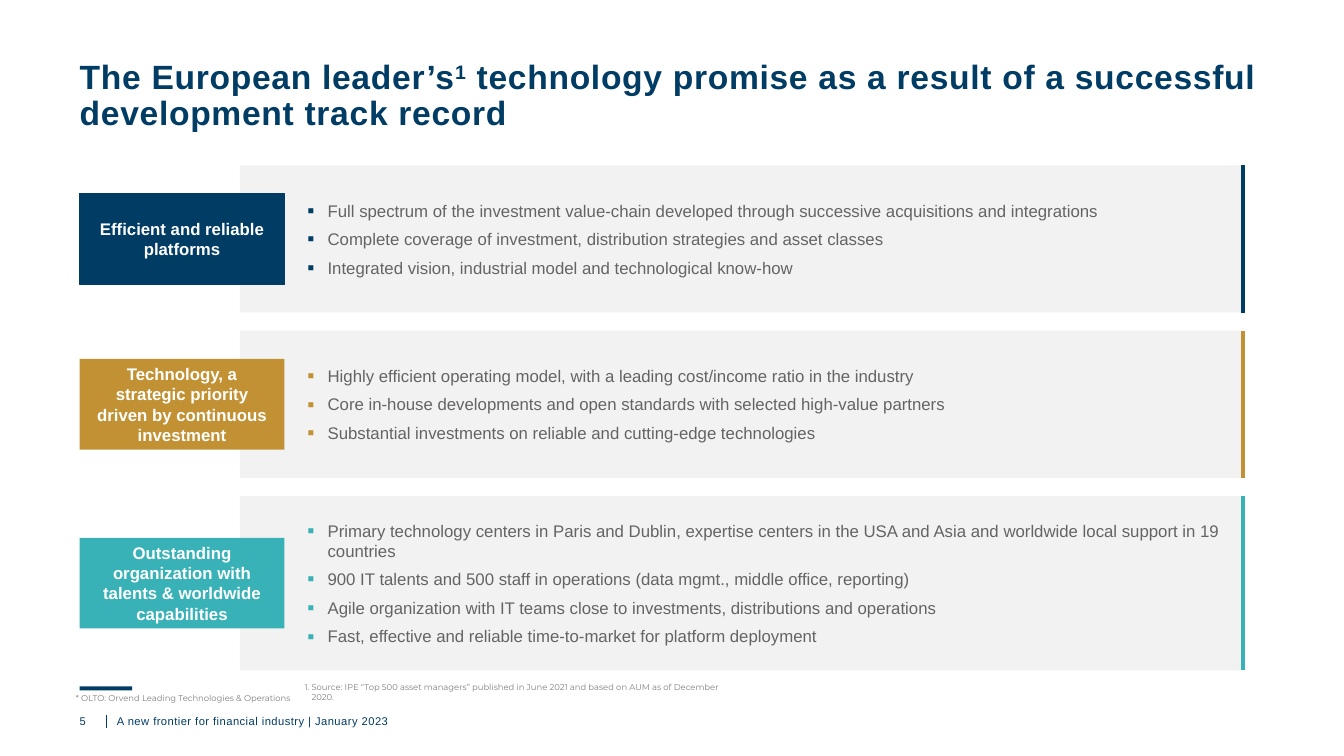
from pptx import Presentation
from pptx.dml.color import RGBColor
from pptx.enum.shapes import MSO_CONNECTOR, MSO_SHAPE
from pptx.enum.text import MSO_ANCHOR as ANCHOR, PP_ALIGN as ALIGN
from pptx.oxml.ns import qn
from pptx.util import Inches, Pt
from lxml.etree import SubElement

NAVY = RGBColor(0x00, 0x3C, 0x64)
GOLD = RGBColor(0xC1, 0x91, 0x34)
TEAL = RGBColor(0x38, 0xB2, 0xB6)
PANEL = RGBColor(0xF2, 0xF2, 0xF2)
BODY = RGBColor(0x64, 0x64, 0x64)
NOTE = RGBColor(0x80, 0x80, 0x80)
WHITE = RGBColor(0xFF, 0xFF, 0xFF)

W, H = Inches(13.33), Inches(7.5)
COL, ROW = W / 100, H / 100
LEFT, TOP, GAP = 5.93, 21.87, 2.4
PANEL_LEFT, PANEL_COLS = 17.85, 74.64
TAG_COLS, TAG_ROWS = 15.23, 12

TITLE_FONT = {"name": "Arial", "size": Pt(24), "bold": True}
TAG_FONT = {"name": "Arial", "size": Pt(12), "bold": True}
BODY_FONT = {"name": "Arial", "size": Pt(12)}
NOTE_FONT = {"name": "Montserrat", "size": Pt(6)}
FOOTER_FONT = {"name": "Arial", "size": Pt(8)}

BANDS = [
    (NAVY, 19.47, "Efficient and reliable platforms", [
        "Full spectrum of the investment value-chain developed through successive acquisitions and integrations",
        "Complete coverage of investment, distribution strategies and asset classes",
        "Integrated vision, industrial model and technological know-how",
    ]),
    (GOLD, 19.47, "Technology, a strategic priority driven by continuous investment", [
        "Highly efficient operating model, with a leading cost/income ratio in the industry",
        "Core in-house developments and open standards with selected high-value partners",
        "Substantial investments on reliable and cutting-edge technologies",
    ]),
    (TEAL, 23.07, "Outstanding organization with talents & worldwide capabilities", [
        "Primary technology centers in Paris and Dublin, expertise centers in the USA and Asia "
        "and worldwide local support in 19 countries",
        "900 IT talents and 500 staff in operations (data mgmt., middle office, reporting)",
        "Agile organization with IT teams close to investments, distributions and operations",
        "Fast, effective and reliable time-to-market for platform deployment",
    ]),
]


def place(col, row, cols, rows):
    return [round(n) for n in (col * COL, row * ROW, cols * COL, rows * ROW)]


def add_run(p, text, style, color, **attrs):
    r = p.add_run()
    r.text = text
    for name, value in style.items():
        setattr(r.font, name, value)
    r.font.color.rgb = color
    for name, value in attrs.items():
        r.font._element.set(name, str(value))


def set_indent(p, margin, hanging):
    pPr = p._p.get_or_add_pPr()
    pPr.set("marL", str(Inches(margin)))
    pPr.set("indent", str(-Inches(hanging)))
    return pPr


def set_inset(tf, inset):
    for side in ("left", "top", "right", "bottom"):
        setattr(tf, f"margin_{side}", Inches(inset))


def add_rect(slide, box, fill):
    sp = slide.shapes.add_shape(MSO_SHAPE.RECTANGLE, *place(*box))
    sp.shadow.inherit = False
    sp.fill.solid()
    sp.fill.fore_color.rgb = fill
    sp.line.fill.background()
    sp.text_frame.word_wrap = True
    sp.text_frame.vertical_anchor = ANCHOR.MIDDLE
    return sp


def add_rule(slide, col, row, rows, color, width):
    x, y, _, height = place(col, row, 0, rows)
    line = slide.shapes.add_connector(MSO_CONNECTOR.STRAIGHT, x, y, x, y + height)
    line.line.color.rgb = color
    line.line.width = Pt(width)
    SubElement(line._element.spPr, qn("a:effectLst"))


def add_text(slide, box, anchor=ANCHOR.TOP):
    tf = slide.shapes.add_textbox(*place(*box)).text_frame
    tf.word_wrap = True
    tf.vertical_anchor = anchor
    set_inset(tf, 0)
    return tf.paragraphs[0]


def add_bullet(p, color):
    p.level = 2
    pPr = set_indent(p, 0.79, 0.2)
    clr = SubElement(pPr, qn("a:buClr"))
    SubElement(clr, qn("a:srgbClr"), val=str(color))
    SubElement(pPr, qn("a:buSzPct"), val="120000")
    SubElement(pPr, qn("a:buFont"), typeface="Arial")
    SubElement(pPr, qn("a:buChar"), char="▪")


def add_title(slide, box):
    p = add_text(slide, box)
    p.line_spacing = 0.9
    add_run(p, "The European leader’s", TITLE_FONT, NAVY, spc=50)
    add_run(p, "1", TITLE_FONT, NAVY, spc=50, baseline=30000)
    add_run(p, " technology promise as a result of a successful development track record",
            TITLE_FONT, NAVY, spc=50)


def add_band(slide, box, color, label, points):
    col, row, cols, rows = box
    tf = add_rect(slide, box, PANEL).text_frame
    set_inset(tf, 0.08)
    for i, point in enumerate(points):
        p = tf.add_paragraph() if i else tf.paragraphs[0]
        p.alignment = ALIGN.LEFT
        p.space_before = Pt(6 if i else 0)
        add_bullet(p, color)
        add_run(p, point, BODY_FONT, BODY)
    add_rule(slide, col + cols, row, rows, color, 2.5)

    tag = add_rect(slide, (LEFT, row + (rows - TAG_ROWS) / 2, TAG_COLS, TAG_ROWS), color)
    if color == NAVY:
        tag.line.color.rgb = color
        tag.line.width = Pt(1)
    p = tag.text_frame.paragraphs[0]
    p.alignment = ALIGN.CENTER
    add_run(p, label, TAG_FONT, WHITE)


def add_note(slide, box, text):
    p = add_text(slide, box, ANCHOR.BOTTOM)
    set_indent(p, 0.07, 0.07)
    add_run(p, text, NOTE_FONT, NOTE)


def add_footer(slide, box):
    col, row, cols, rows = box
    add_rect(slide, (col, row, 3.9, 0.53), NAVY)
    add_note(slide, (col - 0.3, row + 0.93, 28.96, 1.33),
             "* OLTO: Orvend Leading Technologies & Operations")
    add_note(slide, (col + 16.73, row - 0.53, 31.28, 2.67),
             "1. Source: IPE “Top 500 asset managers” published in June 2021 "
             "and based on AUM as of December 2020.")
    base = row + rows - 2.67
    add_run(add_text(slide, (col, base, 1.95, 2.67)), "5", FOOTER_FONT, NAVY)
    add_rule(slide, col + 1.95, base, 1.73, NAVY, 0.5)
    add_run(add_text(slide, (col + 2.77, base, 57, 2.67)),
            "A new frontier for financial industry | January 2023", FOOTER_FONT, NAVY, spc=30)


def main():
    prs = Presentation()
    prs.slide_width, prs.slide_height = W, H
    slide = prs.slides.add_slide(prs.slide_layouts[6])
    add_title(slide, (LEFT, 8, 87.85, 11.2))
    row = TOP
    for color, rows, label, points in BANDS:
        add_band(slide, (PANEL_LEFT, row, PANEL_COLS, rows), color, label, points)
        row += rows + GAP
    add_footer(slide, (LEFT, 90.8, 87.85, 6.4))
    prs.save("out.pptx")


if __name__ == "__main__":
    main()
